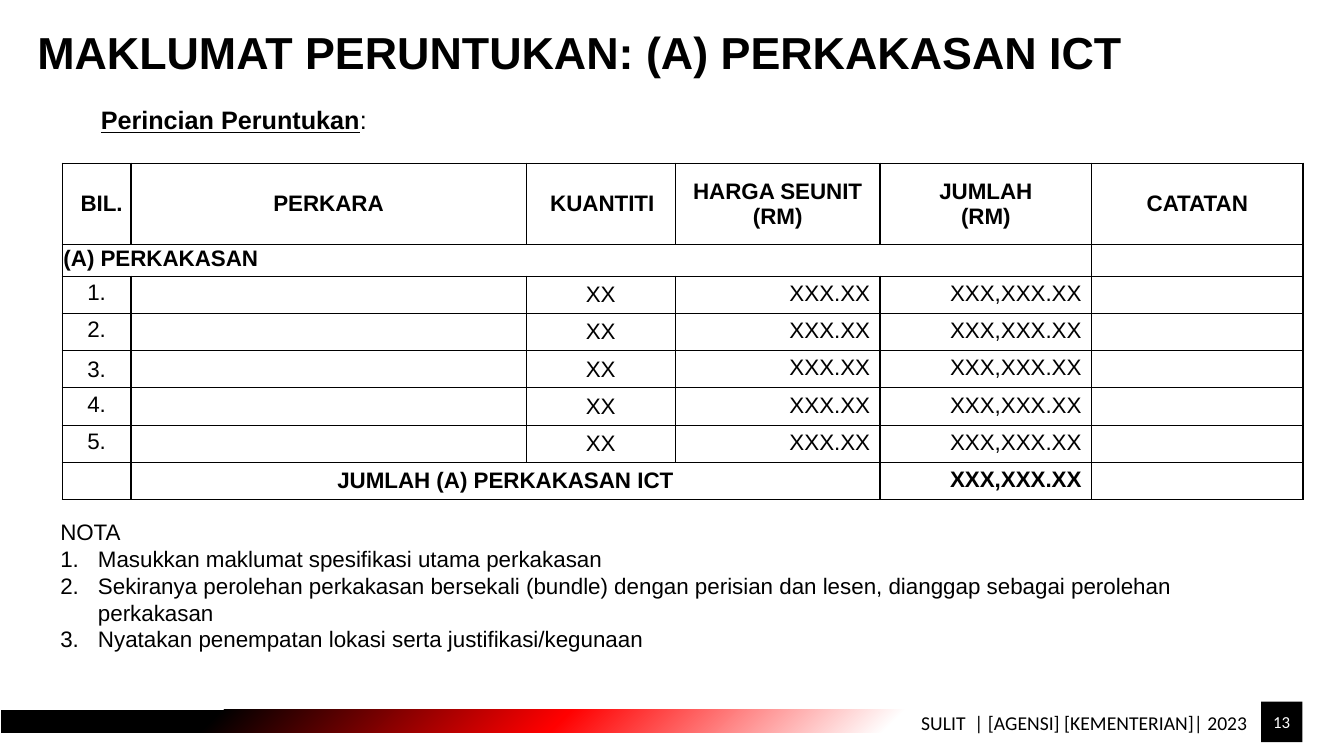
import pptx
import pptx.util
import pptx.dml.color
import pptx.enum.shapes
import pptx.enum.text
import pptx.oxml
import pptx.oxml.ns

Cm = pptx.util.Cm
Pt = pptx.util.Pt
ALIGN = pptx.enum.text.PP_ALIGN
MIDDLE = pptx.enum.text.MSO_ANCHOR.MIDDLE
TOP = pptx.enum.text.MSO_ANCHOR.TOP
RECTANGLE = pptx.enum.shapes.MSO_SHAPE.RECTANGLE
NAMESPACE = pptx.oxml.ns.nsdecls("a")

BLACK = "000000"
WHITE = "FFFFFF"
RED = "FF0000"

HEADINGS = ["BIL.", "PERKARA", "KUANTITI", "HARGA SEUNIT\n(RM)", "JUMLAH\n(RM)", "CATATAN"]
HEADING_INDENTS = {0: 0.25, 2: 0.08}
ITEM_COUNT = 5
NOTES = [
    "Masukkan maklumat spesifikasi utama perkakasan",
    "Sekiranya perolehan perkakasan bersekali (bundle) dengan perisian dan lesen, "
    "dianggap sebagai perolehan perkakasan",
    "Nyatakan penempatan lokasi serta justifikasi/kegunaan",
]


def color(hex_string):
    return pptx.dml.color.RGBColor.from_string(hex_string)


def style(font, size, name="Arial", bold=False, hex_string=BLACK):
    font.size = Pt(size)
    font.name = name
    font.bold = bold
    font.color.rgb = color(hex_string)


def write(frame, text, size, align=ALIGN.LEFT, spacing=None, **look):
    frame.text = text
    for paragraph in frame.paragraphs:
        paragraph.alignment = align
        paragraph.line_spacing = spacing
        style(paragraph.font, size, **look)


def add_text_frame(slide, box, anchor=TOP):
    frame = slide.shapes.add_textbox(*map(Cm, box)).text_frame
    frame.word_wrap = True
    frame.vertical_anchor = anchor
    return frame


def add_block(slide, box, hex_string):
    block = slide.shapes.add_shape(RECTANGLE, *map(Cm, box))
    block.shadow.inherit = False
    block.fill.solid()
    block.fill.fore_color.rgb = color(hex_string)
    block.line.fill.background()
    return block


def indent(paragraph, left, first=0):
    properties = paragraph._p.get_or_add_pPr()
    properties.set("marL", str(Cm(left)))
    properties.set("indent", str(Cm(first)))
    return properties


def add_title(slide, box):
    frame = add_text_frame(slide, box, MIDDLE)
    write(frame, "MAKLUMAT PERUNTUKAN: (A) PERKAKASAN ICT", 32, spacing=0.9, bold=True)


def add_subtitle(slide, box):
    paragraph = add_text_frame(slide, box).paragraphs[0]
    paragraph.alignment = ALIGN.JUSTIFY
    paragraph.space_before = Pt(3.6)
    for text, emphasized in [("Perincian Peruntukan", True), (":", False)]:
        run = paragraph.add_run()
        run.text = text
        style(run.font, 18, bold=emphasized)
        run.font.underline = emphasized


def outline(cell):
    for side in ("lnL", "lnR", "lnT", "lnB"):
        cell._tc.get_or_add_tcPr().append(pptx.oxml.parse_xml(
            f'<a:{side} {NAMESPACE} w="{Pt(1)}"><a:solidFill>'
            f'<a:srgbClr val="{BLACK}"/></a:solidFill></a:{side}>'))
    cell.fill.background()


def fill_cell(cell, text, align=ALIGN.CENTER, bold=False, spacing=None):
    write(cell.text_frame, text, 16, align, spacing, bold=bold)
    if align != ALIGN.RIGHT:
        cell.vertical_anchor = MIDDLE
        cell.margin_left = cell.margin_right = Cm(0.03)
        cell.margin_top = cell.margin_bottom = 0


def add_budget_table(slide, box):
    total = ITEM_COUNT + 2
    table = slide.shapes.add_table(total + 1, len(HEADINGS), *map(Cm, box)).table
    table.first_row = table.horz_banding = False

    widths = [1.73, 0, 3.76, 5.16, 5.33, 5.33]
    widths[1] = box[2] - sum(widths)
    for column, width in zip(table.columns, widths):
        column.width = Cm(width)
    heights = [2.06, 0.79]
    heights += [(box[3] - sum(heights)) / (ITEM_COUNT + 1)] * (ITEM_COUNT + 1)
    for row, height in zip(table.rows, heights):
        row.height = Cm(height)

    for cell in table.iter_cells():
        outline(cell)
        fill_cell(cell, "")

    for column, heading in enumerate(HEADINGS):
        fill_cell(table.cell(0, column), heading, bold=True)
    for column, left in HEADING_INDENTS.items():
        indent(table.cell(0, column).text_frame.paragraphs[0], left)

    table.cell(1, 0).merge(table.cell(1, 4))
    fill_cell(table.cell(1, 0), "(A) PERKAKASAN", ALIGN.LEFT, True, Pt(15.7))

    for number in range(1, ITEM_COUNT + 1):
        row = number + 1
        fill_cell(table.cell(row, 0), f"{number}.", spacing=None if number == 3 else Pt(15.1))
        fill_cell(table.cell(row, 2), "XX")
        for column, amount in [(3, "XXX.XX"), (4, "XXX,XXX.XX")]:
            amount_cell = table.cell(row, column)
            reset_margins(amount_cell)
            fill_cell(amount_cell, amount, ALIGN.RIGHT)

    table.cell(total, 1).merge(table.cell(total, 3))
    fill_cell(table.cell(total, 1), "JUMLAH (A) PERKAKASAN ICT", bold=True)
    reset_margins(table.cell(total, 4))
    fill_cell(table.cell(total, 4), "XXX,XXX.XX", ALIGN.RIGHT, True)


def reset_margins(cell):
    cell.vertical_anchor = TOP
    cell.margin_left = cell.margin_right = Cm(0.25)
    cell.margin_top = cell.margin_bottom = Cm(0.13)


def add_notes(slide, box):
    frame = add_text_frame(slide, box)
    write(frame, "\n".join(["NOTA"] + NOTES), 16)
    for note in frame.paragraphs[1:]:
        properties = indent(note, 0.95, -0.95)
        numbering = pptx.oxml.parse_xml(f'<a:buAutoNum {NAMESPACE} type="arabicPeriod"/>')
        properties.insert_element_before(numbering, "a:tabLst", "a:defRPr", "a:extLst")


def add_footer(slide, box):
    left, top, width, height = box
    right = left + width

    band = add_block(slide, (left, top + 0.2, width - 0.76, 0.58), WHITE)
    stops = "".join(
        f'<a:gs pos="{position}000"><a:srgbClr val="{hex_string}"/></a:gs>'
        for position, hex_string in [(30, WHITE), (56, RED), (83, BLACK)])
    gradient = pptx.oxml.parse_xml(
        f'<a:gradFill {NAMESPACE} rotWithShape="1"><a:gsLst>{stops}</a:gsLst>'
        '<a:path path="circle"><a:fillToRect l="100000" t="100000"/></a:path></a:gradFill>')
    properties = band._element.spPr
    properties.replace(properties.find(pptx.oxml.ns.qn("a:solidFill")), gradient)

    label = add_text_frame(slide, (right - 12.86, top + 0.15, 11.73, 0.86), MIDDLE)
    write(label, "SULIT  | [AGENSI] [KEMENTERIAN]| 2023", 14, ALIGN.RIGHT, 0.9, name="Calibri")

    page = add_block(slide, (right - 1.04, top, 1.04, height), BLACK).text_frame
    page.vertical_anchor = MIDDLE
    page.margin_left = page.margin_right = 0
    write(page, "13", 12, ALIGN.CENTER, name="Calibri", hex_string=WHITE)


def main():
    presentation = pptx.Presentation()
    presentation.slide_width = Cm(33.87)
    presentation.slide_height = Cm(19.05)
    slide = presentation.slides.add_slide(presentation.slide_layouts[6])
    add_footer(slide, (0.03, 17.68, 32.79, 1.02))
    add_budget_table(slide, (1.57, 4.11, 31.27, 8.19))
    add_subtitle(slide, (2.29, 2.51, 21.21, 1.02))
    add_title(slide, (0.69, 0.56, 29.21, 1.65))
    add_notes(slide, (1.27, 12.93, 29.54, 4.37))
    presentation.save("out.pptx")


if __name__ == "__main__":
    main()
